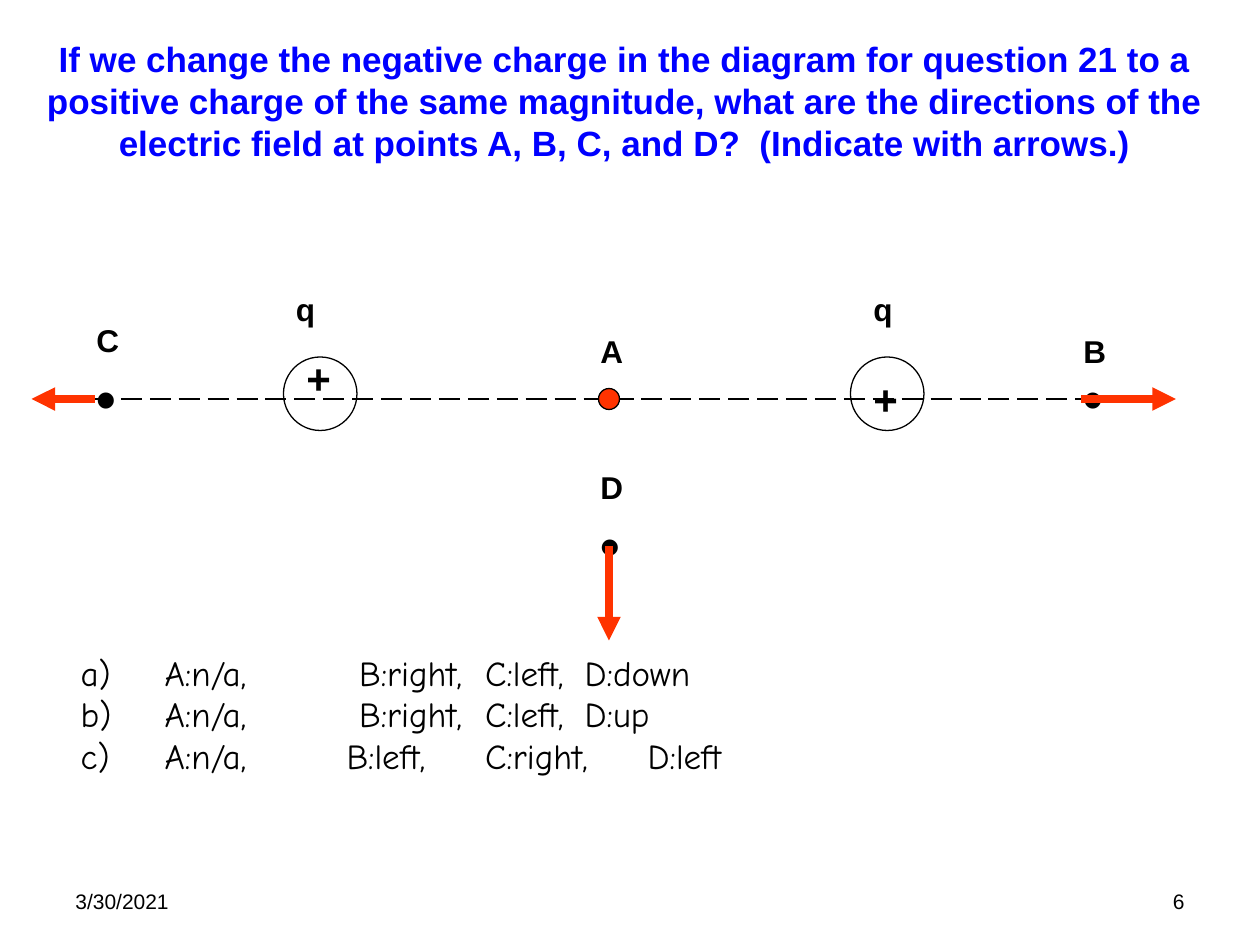
from lxml import etree
from pptx import Presentation
from pptx.dml.color import RGBColor
from pptx.enum.dml import MSO_LINE
from pptx.enum.shapes import MSO_CONNECTOR, MSO_SHAPE
from pptx.enum.text import MSO_ANCHOR, MSO_AUTO_SIZE, PP_ALIGN
from pptx.oxml.ns import qn
from pptx.util import Inches, Pt

LEFT, CENTER, RIGHT = PP_ALIGN.LEFT, PP_ALIGN.CENTER, PP_ALIGN.RIGHT
BLACK, BLUE, RED = "000000", "0000FF", "FF3300"

prs = Presentation()
prs.slide_width, prs.slide_height = Inches(10), Inches(7.5)
s = prs.slides.add_slide(prs.slide_layouts[5])
col = prs.slide_width / 120
row = prs.slide_height / 90


def rgb(color):
    return RGBColor.from_string(color)


def write(p, text, size, color=BLACK, bold=False, align=LEFT, font="Arial"):
    p.alignment = align
    r = p.add_run()
    r.text = text
    r.font.name, r.font.size, r.font.bold = font, Pt(size), bold
    r.font.color.rgb = rgb(color)


title = s.shapes.title
title.left, title.top = int(2 * col), int(3 * row)
title.width, title.height = int(115 * col), int(13.3 * row)
tf = title.text_frame
tf.word_wrap, tf.auto_size = True, MSO_AUTO_SIZE.NONE
tf.vertical_anchor = MSO_ANCHOR.TOP
write(tf.paragraphs[0],
      "If we change the negative charge in the diagram for question 21 to a "
      "positive charge of the same magnitude, what are the directions of the "
      "electric field at points A, B, C, and D?  (Indicate with arrows.)",
      20, BLUE, True, CENTER)

for x, text, align in [(6, "3/30/2021", LEFT), (86, "6", RIGHT)]:
    sp = s.shapes.add_textbox(int(x * col), int(83.4 * row), int(28 * col), int(4.8 * row))
    tf = sp.text_frame
    tf.word_wrap, tf.vertical_anchor = True, MSO_ANCHOR.MIDDLE
    write(tf.paragraphs[0], text, 12, align=align)

diagram = s.shapes.add_group_shape()
axis = 38
lines = [
    (diagram, 6, axis, 108, axis, BLACK, 1.5),
    (s, 103, axis, 112, axis, RED, 4.5),
    (s, 9, axis, 3, axis, RED, 4.5),
    (s, 58, 52, 58, 61, RED, 4.5),
]
circles = [
    (diagram, MSO_SHAPE.FLOWCHART_CONNECTOR, 27, 34, 7, None),
    (diagram, MSO_SHAPE.FLOWCHART_CONNECTOR, 81, 34, 7, None),
    (s, MSO_SHAPE.OVAL, 57, 37, 2, RED),
]
labels = [
    ("•", 32, 4.3, 7.6, [(8, 34), (56, 34), (102, 34), (56, 48)]),
    ("+", 24, 5, 6, [(28, 33), (82, 35)]),
    ("q", 18, 7, 4.8, [(27, 27), (82, 27)]),
    ("A", 18, 7, 4.8, [(56, 31)]),
    ("B", 18, 7, 4.8, [(102, 31)]),
    ("C", 18, 7, 4.8, [(8, 30)]),
    ("D", 18, 7, 4.8, [(56, 44)]),
]

for text, size, w, h, spots in labels:
    for x, y in spots:
        sp = diagram.shapes.add_textbox(int(x * col), int(y * row), int(w * col), int(h * row))
        tf = sp.text_frame
        tf.word_wrap = True
        write(tf.paragraphs[0], text, size, bold=True)

for parent, kind, x, y, d, fill in circles:
    sp = parent.shapes.add_shape(kind, int(x * col), int(y * row), int(d * col), int(d * row))
    sp.shadow.inherit = False
    if fill:
        sp.fill.solid()
        sp.fill.fore_color.rgb = rgb(fill)
    else:
        sp.fill.background()
    sp.line.color.rgb, sp.line.width = rgb(BLACK), Pt(0.75)

for parent, x1, y1, x2, y2, color, width in lines:
    line = parent.shapes.add_connector(MSO_CONNECTOR.STRAIGHT, int(x1 * col), int(y1 * row),
                                       int(x2 * col), int(y2 * row))
    line.line.color.rgb, line.line.width = rgb(color), Pt(width)
    if color == RED:
        etree.SubElement(line.line._get_or_add_ln(), qn("a:tailEnd"), type="triangle")
    else:
        line.line.dash_style = MSO_LINE.LONG_DASH
    etree.SubElement(line._element.spPr, qn("a:effectLst"))

answers = [
    ("A:n/a,\tB:right,\tC:left,\tD:down", (1.02, 2.21, 3.21)),
    ("A:n/a,\tB:right,\tC:left,\tD:up", (1.02, 2.21, 3.21)),
    ("A:n/a,\tB:left,\tC:right,\tD:left", (1.02, 2.11, 3.21)),
]
sp = s.shapes.add_textbox(int(6.5 * col), int(62.2 * row), int(110 * col), int(23 * row))
tf = sp.text_frame
tf.word_wrap = True
for i, (text, stops) in enumerate(answers):
    p = tf.add_paragraph() if i else tf.paragraphs[0]
    write(p, text, 20, font="Comic Neue")
    p.line_spacing, p.space_before = 0.8, Pt(4.6)
    pPr = p._p.get_or_add_pPr()
    pPr.set("marL", str(int(8 * col)))
    pPr.set("indent", str(int(-8 * col)))
    etree.SubElement(pPr, qn("a:buFont"), typeface="Comic Neue")
    etree.SubElement(pPr, qn("a:buAutoNum"), type="alphaLcParenR")
    tabs = etree.SubElement(pPr, qn("a:tabLst"))
    for stop in stops:
        etree.SubElement(tabs, qn("a:tab"), pos=str(Inches(stop)), algn="l")

prs.save("out.pptx")
